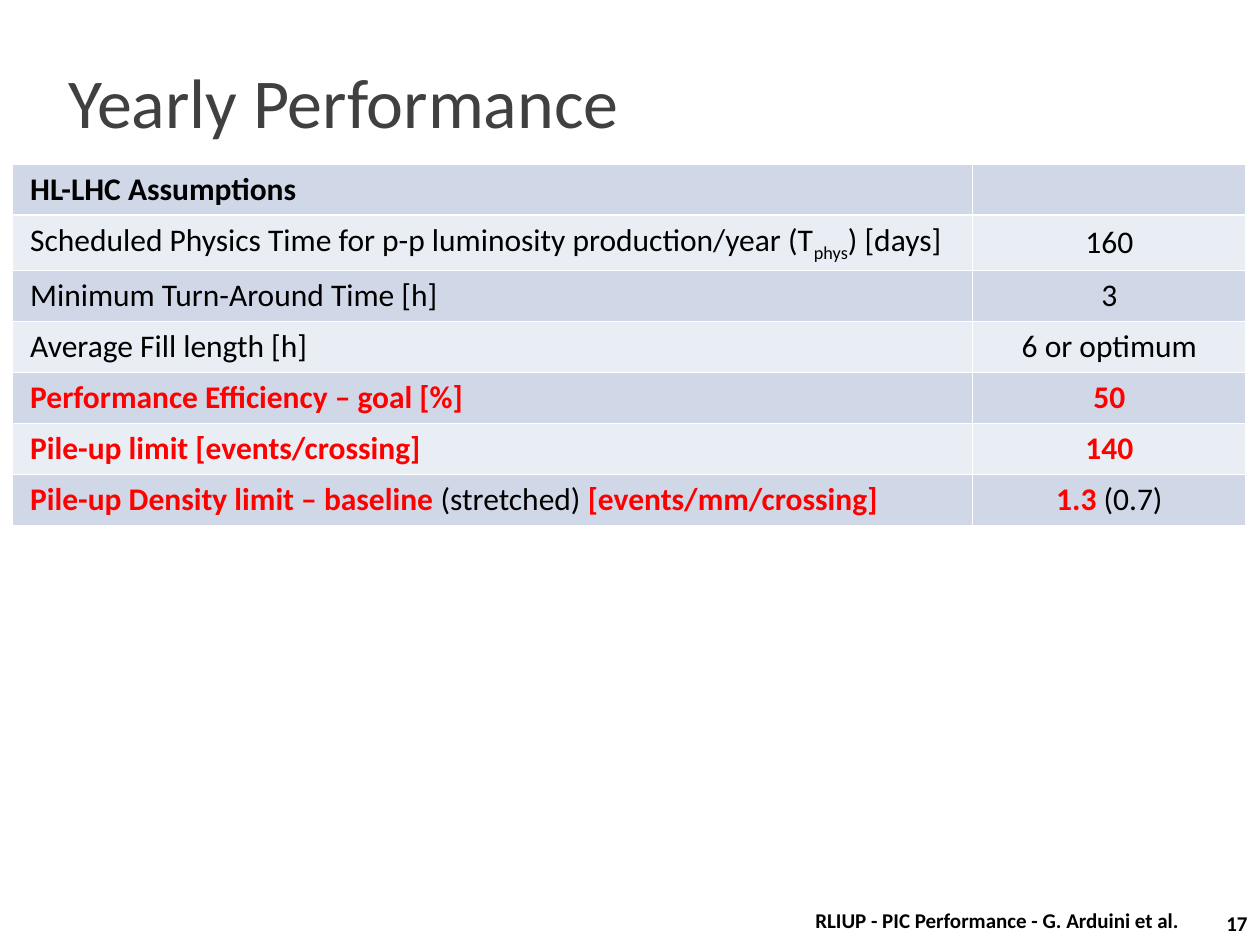
from lxml import etree
from pptx import Presentation
from pptx.dml.color import RGBColor
from pptx.enum.text import MSO_ANCHOR, PP_ALIGN
from pptx.oxml.ns import qn
from pptx.util import Inches, Pt

LEFT, CENTER, RIGHT = PP_ALIGN.LEFT, PP_ALIGN.CENTER, PP_ALIGN.RIGHT
MIDDLE = MSO_ANCHOR.MIDDLE
FONT = "Calibri"
COLORS = {
    "title": "404040",
    "text": "000000",
    "key": "FF0000",
    "border": "FFFFFF",
    "band_dark": "D0D8E8",
    "band_light": "E9EDF4",
}
# Run styles: (colour, bold, baseline shift in 1/1000 %)
PLAIN = ("text", False, 0)
BOLD = ("text", True, 0)
KEY = ("key", True, 0)
SUB = ("text", False, -25000)

ROWS = [
    ([("HL-LHC Assumptions", BOLD)], []),
    ([("Scheduled Physics Time for p-p luminosity production/year (T", PLAIN),
      ("phys", SUB), (") [days]", PLAIN)], [("160", PLAIN)]),
    ([("Minimum Turn-Around Time [h]", PLAIN)], [("3", PLAIN)]),
    ([("Average Fill length [h]", PLAIN)], [("6 or optimum", PLAIN)]),
    ([("Performance Efficiency – goal [%]", KEY)], [("50", KEY)]),
    ([("Pile-up limit [events/crossing]", KEY)], [("140", KEY)]),
    ([("Pile-up Density limit – baseline ", KEY), ("(stretched) ", PLAIN),
      ("[events/mm/crossing]", KEY)], [("1.3 ", KEY), ("(0.7)", PLAIN)]),
]
COL_WIDTHS = (7.62, 2.17)


def rgb(name):
    return RGBColor.from_string(COLORS[name])


def set_insets(obj, x, y):
    obj.margin_left = obj.margin_right = Inches(x)
    obj.margin_top = obj.margin_bottom = Inches(y)


def style_font(font, size, color, bold=False):
    font.name, font.size, font.bold = FONT, Pt(size), bold
    font.color.rgb = rgb(color)


def place_title(slide, text, x, y, w, h):
    sp = slide.shapes.title
    sp.left, sp.top, sp.width, sp.height = map(Inches, (x, y, w, h))
    tf = sp.text_frame
    tf.text = text
    tf.vertical_anchor = MIDDLE
    set_insets(tf, 0.04, 0)
    p = tf.paragraphs[0]
    p.alignment = LEFT
    style_font(p.runs[0].font, 40, "title")


def add_borders(cell):
    """Draw a thin line on all four sides; call before the cell is filled."""
    tc_pr = cell._tc.get_or_add_tcPr()
    for side in ("lnL", "lnR", "lnT", "lnB"):
        ln = etree.SubElement(tc_pr, qn(f"a:{side}"), w=str(Pt(1)))
        fill = etree.SubElement(ln, qn("a:solidFill"))
        etree.SubElement(fill, qn("a:srgbClr"), val=COLORS["border"])


def fill_cell(cell, runs, align, band):
    add_borders(cell)
    cell.fill.solid()
    cell.fill.fore_color.rgb = rgb(band)
    cell.vertical_anchor = MIDDLE
    set_insets(cell, 0.14, 0.05)
    p = cell.text_frame.paragraphs[0]
    p.alignment = align
    p.font.size = Pt(18)
    for text, (color, bold, baseline) in runs:
        r = p.add_run()
        r.text = text
        style_font(r.font, 18, color, bold)
        if baseline:
            r.font._element.set("baseline", str(baseline))


def add_assumptions_table(slide, x, y, row_height):
    table = slide.shapes.add_table(
        len(ROWS), len(COL_WIDTHS), Inches(x), Inches(y),
        Inches(sum(COL_WIDTHS)), Inches(row_height * len(ROWS))).table
    table.first_row = table.horz_banding = False
    for column, width in zip(table.columns, COL_WIDTHS):
        column.width = Inches(width)
    for i, (row, contents) in enumerate(zip(table.rows, ROWS)):
        row.height = Inches(row_height)
        band = "band_light" if i % 2 else "band_dark"
        for cell, runs, align in zip(row.cells, contents, (LEFT, CENTER)):
            fill_cell(cell, runs, align, band)


def add_footer_text(slide, text, x, y, w, h, align, inset_y):
    tf = slide.shapes.add_textbox(*map(Inches, (x, y, w, h))).text_frame
    tf.word_wrap = True
    tf.vertical_anchor = MIDDLE
    set_insets(tf, 0.1, inset_y)
    tf.text = text
    p = tf.paragraphs[0]
    p.alignment = align
    style_font(p.runs[0].font, 12, "text", True)


def main():
    prs = Presentation()
    prs.slide_width, prs.slide_height = Inches(10), Inches(7.5)
    slide = prs.slides.add_slide(prs.slide_layouts[5])
    place_title(slide, "Yearly Performance", 0.5, 0.3, 9, 1)
    add_assumptions_table(slide, 0.1, 1.3, 0.4)
    add_footer_text(slide, "RLIUP - PIC Performance - G. Arduini et al.",
                    6.33, 7.1, 3.17, 0.4, CENTER, 0.05)
    add_footer_text(slide, "17", 9.5, 7.15, 0.5, 0.35, RIGHT, 0)
    prs.save("out.pptx")


if __name__ == "__main__":
    main()
